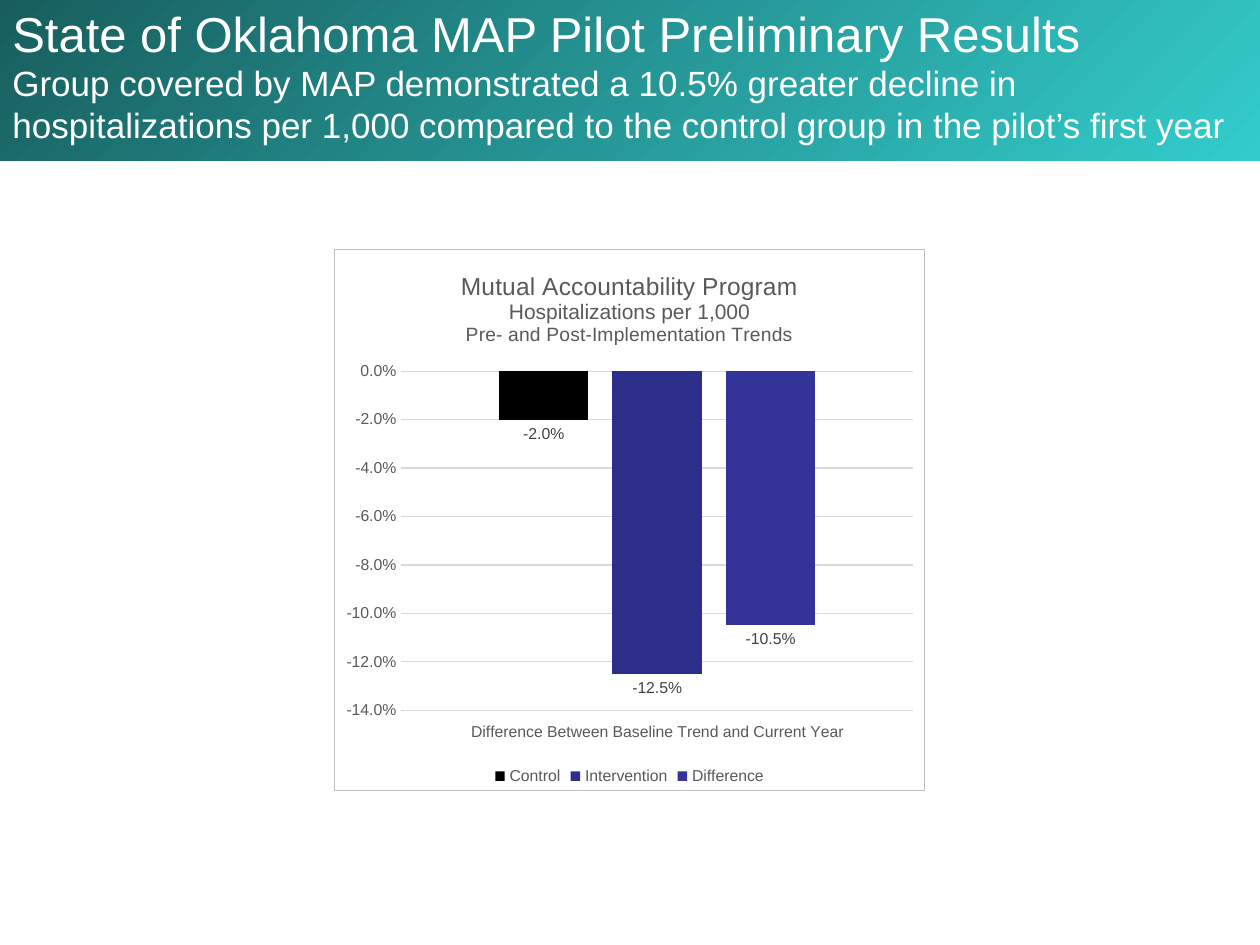
"""Build the Oklahoma MAP pilot results slide."""
from lxml.etree import SubElement, fromstring
from pptx import Presentation
from pptx.chart.data import CategoryChartData
from pptx.dml.color import RGBColor
from pptx.enum.chart import (XL_CHART_TYPE, XL_LABEL_POSITION, XL_LEGEND_POSITION,
                             XL_TICK_LABEL_POSITION, XL_TICK_MARK)
from pptx.enum.shapes import MSO_SHAPE
from pptx.enum.text import MSO_ANCHOR
from pptx.oxml.ns import nsdecls, qn
from pptx.util import Pt

COLORS = {"dark": "185E5E", "teal": "33CCCC", "white": "FFFFFF", "text": "595959",
          "label": "404040", "grid": "D9D9D9", "border": "BFBFBF",
          "control": "000000", "intervention": "2D2D8A", "difference": "333399"}
FONT = "Arial"
HEADING = [
    ("State of Oklahoma MAP Pilot Preliminary Results", 28),
    ("Group covered by MAP demonstrated a 10.5% greater decline in hospitalizations "
     "per 1,000 compared to the control group in the pilot’s first year", 20),
]
CHART_TITLE = [("Mutual Accountability Program", 14), ("Hospitalizations per 1,000", 12),
               ("Pre- and Post-Implementation Trends", 11)]
CATEGORY = "Difference Between Baseline Trend and Current Year"
SERIES = [("Control", -0.02), ("Intervention", -0.125), ("Difference", -0.105)]
PERCENT = "0.0%"
BAND = (0, -4, 1260, 165)
HEADING_BOX = (0, -3, 1260, 155)
CHART_BOX = (334, 249, 591, 542)
PLOT_BOX = (401, 371, 513, 340)


def px(*values):
    return [round(v * 914400 / 126) for v in values]


def rgb(name):
    return RGBColor.from_string(COLORS[name])


def style(font, size, color):
    font.name, font.size, font.bold = FONT, Pt(size), False
    font.color.rgb = rgb(color)


def outline(line, color):
    line.width = Pt(0.75)
    line.color.rgb = rgb(color)


def add_run(p, text, size, color):
    r = p.add_run()
    r.text = text
    style(r.font, size, color)


def add_header(s):
    sp = s.shapes.add_shape(MSO_SHAPE.RECTANGLE, *px(*BAND))
    sp.shadow.inherit = False
    sp.line.fill.background()
    sp.fill.gradient()
    sp.fill.gradient_angle = 315
    for stop, color in zip(sp.fill.gradient_stops, ("dark", "teal")):
        stop.color.rgb = rgb(color)

    tf = s.shapes.add_textbox(*px(*HEADING_BOX)).text_frame
    tf.word_wrap = True
    tf.vertical_anchor = MSO_ANCHOR.MIDDLE
    p = tf.paragraphs[0]
    for i, (text, size) in enumerate(HEADING):
        if i:
            p.add_line_break()
        add_run(p, text, size, "white")


def set_plot_area(chart):
    left, top, width, height = CHART_BOX
    x, y, w, h = PLOT_BOX
    area = chart._chartSpace.chart.plotArea
    for old in area.findall(qn("c:layout")):
        area.remove(old)
    layout = fromstring(f"<c:layout {nsdecls('c')}/>")
    area.insert(0, layout)
    manual = SubElement(layout, qn("c:manualLayout"))
    settings = [("layoutTarget", "inner"), ("xMode", "edge"), ("yMode", "edge"),
                ("x", (x - left) / width), ("y", (y - top) / height),
                ("w", w / width), ("h", h / height)]
    for tag, value in settings:
        text = value if isinstance(value, str) else f"{value:.3f}"
        SubElement(manual, qn(f"c:{tag}")).set("val", text)


def set_border(chart):
    border = fromstring(
        f'<c:spPr {nsdecls("c", "a")}><a:solidFill><a:srgbClr val="{COLORS["white"]}"/></a:solidFill>'
        f'<a:ln w="{Pt(0.75)}"><a:solidFill><a:srgbClr val="{COLORS["border"]}"/></a:solidFill></a:ln>'
        "</c:spPr>")
    chart._chartSpace.chart.addnext(border)


def style_axes(chart):
    cat, val = chart.category_axis, chart.value_axis
    for axis in (cat, val):
        axis.major_tick_mark = axis.minor_tick_mark = XL_TICK_MARK.NONE
        style(axis.tick_labels.font, 9, "text")
    cat.tick_label_position = XL_TICK_LABEL_POSITION.LOW
    outline(cat.format.line, "grid")
    val.minimum_scale, val.maximum_scale, val.major_unit = -0.14, 0, 0.02
    val.tick_labels.number_format = PERCENT
    val.tick_labels.number_format_is_linked = False
    val.format.line.fill.background()
    outline(val.major_gridlines.format.line, "grid")


def add_chart(s):
    data = CategoryChartData(number_format=PERCENT)
    data.categories = [CATEGORY]
    for name, value in SERIES:
        data.add_series(name, [value])
    chart = s.shapes.add_chart(XL_CHART_TYPE.COLUMN_CLUSTERED, *px(*CHART_BOX), data).chart
    style(chart.font, 10, "control")

    tf = chart.chart_title.text_frame
    for i, (text, size) in enumerate(CHART_TITLE):
        p = tf.add_paragraph() if i else tf.paragraphs[0]
        add_run(p, text, size, "text")
    chart.chart_title.include_in_layout = False

    chart.has_legend = True
    chart.legend.position = XL_LEGEND_POSITION.BOTTOM
    chart.legend.include_in_layout = False
    style(chart.legend.font, 9, "text")

    plot = chart.plots[0]
    plot.vary_by_categories = False
    plot.gap_width, plot.overlap = 219, -27
    for series in plot.series:
        series.invert_if_negative = False
        series.format.fill.solid()
        series.format.fill.fore_color.rgb = rgb(series.name.lower())
        labels = series.data_labels
        labels.show_value = True
        labels.number_format, labels.number_format_is_linked = PERCENT, False
        labels.position = XL_LABEL_POSITION.OUTSIDE_END
        style(labels.font, 9, "label")

    style_axes(chart)
    set_plot_area(chart)
    set_border(chart)


def main():
    prs = Presentation()
    prs.slide_width, prs.slide_height = px(1260, 945)
    s = prs.slides.add_slide(prs.slide_layouts[6])
    add_header(s)
    add_chart(s)
    prs.save("out.pptx")


if __name__ == "__main__":
    main()
